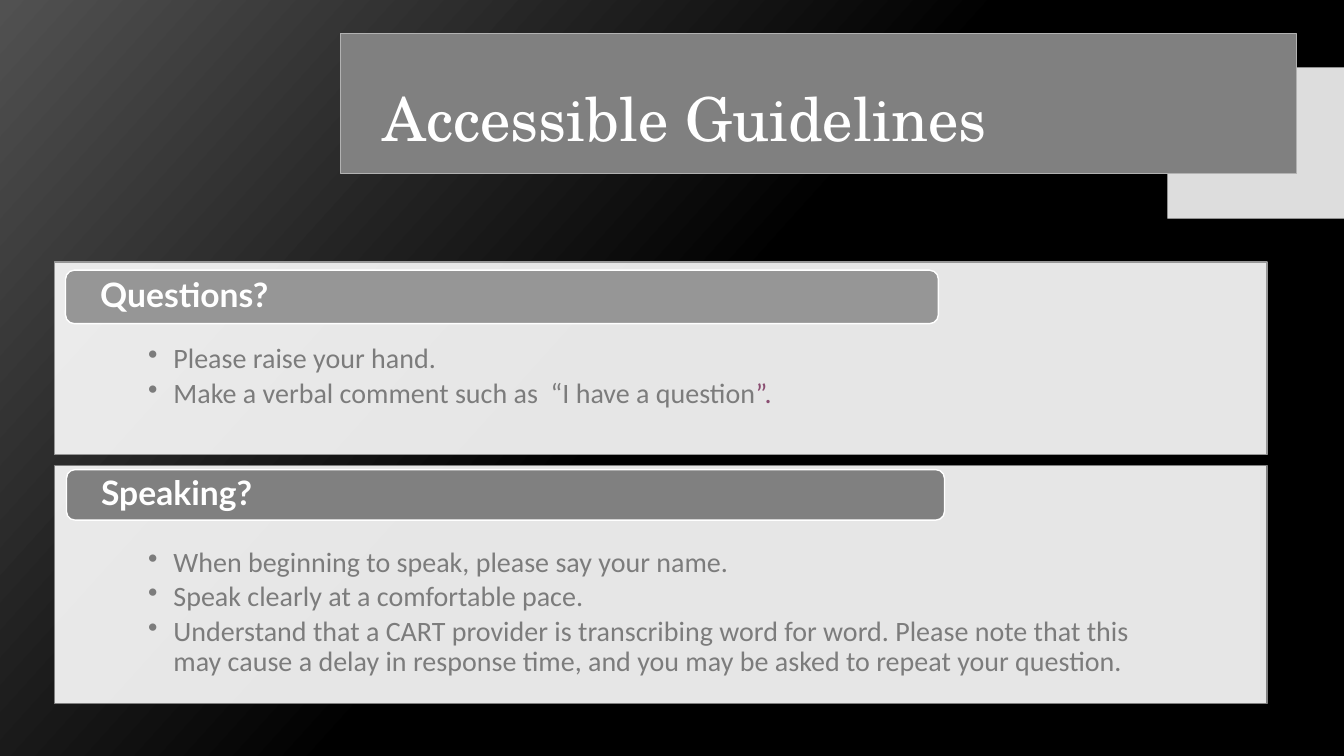
import copy

import pptx
import pptx.dml.color
import pptx.enum.shapes
import pptx.enum.text
import pptx.oxml
import pptx.oxml.ns
import pptx.util

Pt = pptx.util.Pt
RGB = pptx.dml.color.RGBColor
Kind = pptx.enum.shapes.MSO_SHAPE
Anchor = pptx.enum.text.MSO_ANCHOR
Align = pptx.enum.text.PP_ALIGN
qn = pptx.oxml.ns.qn

WHITE = RGB(0xFF, 0xFF, 0xFF)
BLACK = RGB(0, 0, 0)
GLOW = RGB(0x51, 0x51, 0x51)
PALE = RGB(0xDD, 0xDD, 0xDD)
GRAY = RGB(0x80, 0x80, 0x80)
SILVER = RGB(0x96, 0x96, 0x96)
EDGE = RGB(0xB2, 0xB2, 0xB2)
INK = RGB(0x7C, 0x7C, 0x7C)
PLUM = RGB(0x8A, 0x4E, 0x71)

TOPICS = [
    ("Questions?", SILVER, (187.2, 137.5), (46.8, 193, 623.5, 38.2), [
        [("Please raise your hand.", INK)],
        [("Make a verbal comment such as  “I have a question", INK),
         ("”.", PLUM)],
    ]),
    ("Speaking?", GRAY, (332.6, 169.9), (47.5, 335.5, 627.1, 36), [
        [("When beginning to speak, please say your name.", INK)],
        [("Speak clearly at a comfortable pace.", INK)],
        [("Understand that a CART provider is transcribing word for word. "
          "Please note that this may cause a delay in response time, and "
          "you may be asked to repeat your question.", INK)],
    ]),
]


def paint(shape, fill, line=None):
    shape.fill.solid()
    shape.fill.fore_color.rgb = fill
    if line is None:
        shape.line.fill.background()
    else:
        shape.line.color.rgb = line
        shape.line.width = Pt(1)


def block(slide, kind, box, fill, line=None):
    shape = slide.shapes.add_shape(kind, *map(Pt, box))
    shape.shadow.inherit = False
    paint(shape, fill, line)
    return shape


def frame(shape, insets, anchor):
    text = shape.text_frame
    text.word_wrap = True
    text.auto_size = pptx.enum.text.MSO_AUTO_SIZE.NONE
    text.vertical_anchor = anchor
    (text.margin_left, text.margin_top,
     text.margin_right, text.margin_bottom) = map(Pt, insets)
    return text


def write(para, words, face, size, color, bold=False):
    para.alignment = Align.LEFT
    para.line_spacing = 0.9
    run = para.add_run()
    run.text = words
    run.font.name = face
    run.font.size = Pt(size)
    run.font.bold = bold
    run.font.color.rgb = color


def bullet(para):
    props = para._p.get_or_add_pPr()
    props.set("marL", str(Pt(18)))
    props.set("indent", str(-Pt(18)))
    mark = pptx.oxml.parse_xml(
        '<a:buChar xmlns:a="http://schemas.openxmlformats.org/'
        'drawingml/2006/main" char="•"/>')
    props.append(mark)
    para.space_after = Pt(3)


def fade(shape, percent):
    color = shape.fill._xPr.find(qn("a:solidFill")).find(qn("a:srgbClr"))
    alpha = color.makeelement(qn("a:alpha"), {"val": str(percent * 1000)})
    color.append(alpha)


def backdrop(slide):
    fill = slide.background.fill
    fill.gradient()
    fill.gradient_angle = 318
    stops = fill.gradient_stops
    stops[0].color.rgb = GLOW
    stops[0].position = 0
    stops[1].color.rgb = BLACK
    stops[1].position = 0.5
    group = slide._element.find(".//" + qn("a:gsLst"))
    group.append(copy.deepcopy(group[1]))
    fill.gradient_stops[2].position = 1


def heading(slide):
    block(slide, Kind.RECTANGLE, (833.8, 48.2, 126.2, 108), PALE)
    title = slide.shapes.title
    slide.shapes._spTree.append(title._element)
    title.left, title.top, title.width, title.height = map(
        Pt, (243.4, 24, 682.6, 100))
    paint(title, GRAY, EDGE)
    text = frame(title, (30, 28, 7.2, 2), Anchor.MIDDLE)
    write(text.paragraphs[0], "Accessible Guidelines",
          "TeX Gyre Schola", 43.2, WHITE)


def topic(slide, name, color, span, tab, points):
    top, height = span
    panel = block(slide, Kind.RECTANGLE, (38.9, top, 866.2, height),
                  WHITE, color)
    fade(panel, 90)
    text = frame(panel, (67, 59, 67, 11.5), Anchor.TOP)
    for index, point in enumerate(points):
        para = text.add_paragraph() if index else text.paragraphs[0]
        bullet(para)
        for words, tint in point:
            write(para, words, "Calibri", 20, tint)
    label = block(slide, Kind.ROUNDED_RECTANGLE, tab, color, WHITE)
    text = frame(label, (23, 0, 23, 0), Anchor.MIDDLE)
    write(text.paragraphs[0], name, "Lato", 24, WHITE, True)


def main():
    deck = pptx.Presentation()
    deck.slide_width, deck.slide_height = Pt(960), Pt(540)
    slide = deck.slides.add_slide(deck.slide_layouts[5])
    backdrop(slide)
    heading(slide)
    for item in TOPICS:
        topic(slide, *item)
    deck.save("out.pptx")


if __name__ == "__main__":
    main()
